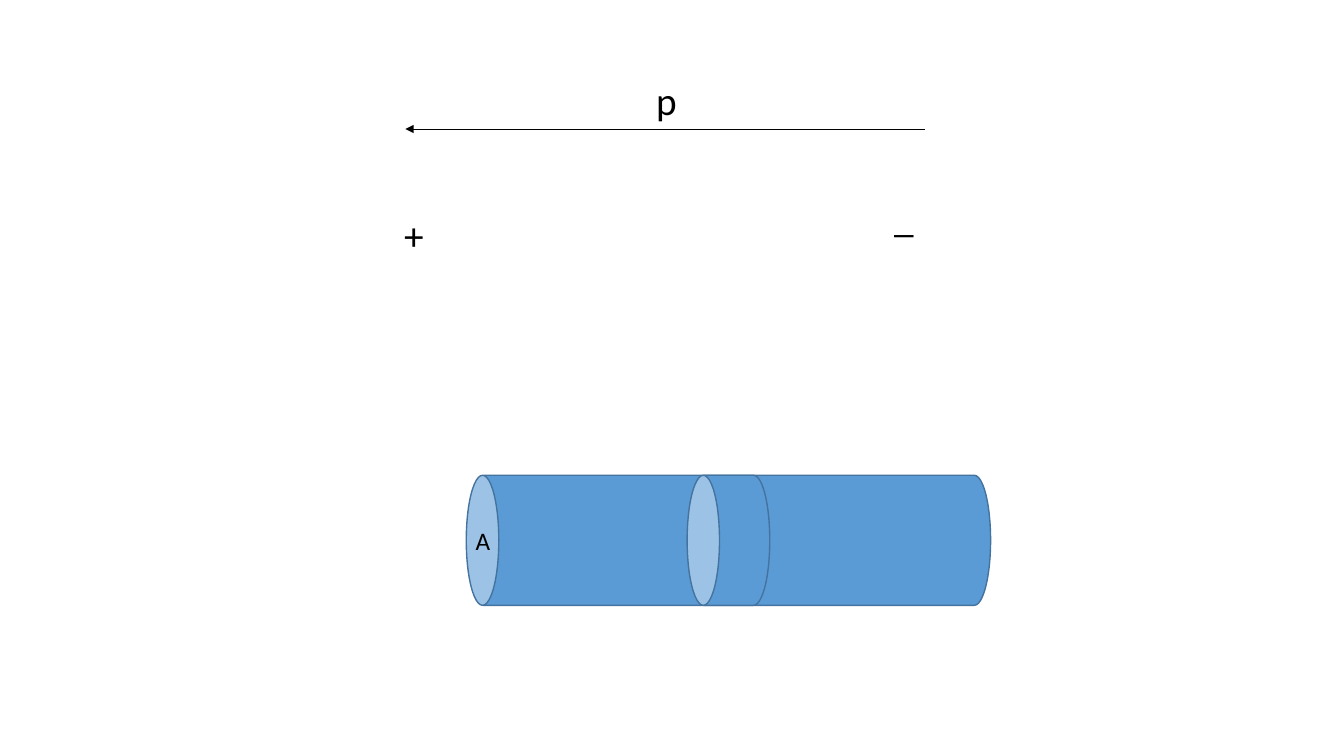
from lxml.etree import SubElement
from pptx import Presentation
from pptx.dml.color import RGBColor
from pptx.enum.shapes import MSO_CONNECTOR, MSO_SHAPE
from pptx.enum.text import MSO_AUTO_SIZE
from pptx.oxml.ns import qn
from pptx.util import Inches, Pt

COLORS = {"ink": "000000", "fill": "5B9BD5", "outline": "43739E"}
FONT = "Calibri"

# text, left, top, width, height, size, wrap
LABELS = [
    ("+", 3.91, 2.05, 0.4, 0.57, 28, False),
    ("_", 8.77, 1.87, 0.4, 0.57, 28, False),
    ("p", 6.41, 0.71, 0.37, 0.57, 28, True),
    ("A", 4.62, 5.16, 0.35, 0.4, 18, False),
]
ARROW = {"start": 9.17, "end": 4.02, "y": 1.28}
CYLINDER_CENTER = (7.225, 5.36)
DIAMETER = 1.29
# length, cap adjustment
CYLINDERS = [(5.2, 0.25), (0.82, 0.392)]


def color(name):
    return RGBColor.from_string(COLORS[name])


def add_cylinder(slide, length, cap):
    """Add a can lying on its side around the shared centre."""
    x, y = CYLINDER_CENTER
    cylinder = slide.shapes.add_shape(
        MSO_SHAPE.CAN, Inches(x - DIAMETER / 2), Inches(y - length / 2),
        Inches(DIAMETER), Inches(length))
    cylinder.rotation = 270
    cylinder.adjustments[0] = cap
    cylinder.shadow.inherit = False
    cylinder.fill.solid()
    cylinder.fill.fore_color.rgb = color("fill")
    cylinder.line.color.rgb = color("outline")
    cylinder.line.width = Pt(1)


def add_arrow(slide):
    y = Inches(ARROW["y"])
    arrow = slide.shapes.add_connector(
        MSO_CONNECTOR.STRAIGHT, Inches(ARROW["start"]), y, Inches(ARROW["end"]), y)
    arrow.line.color.rgb = color("ink")
    arrow.line.width = Pt(0.5)
    SubElement(arrow.line._get_or_add_ln(), qn("a:tailEnd"), type="triangle")
    SubElement(arrow._element.spPr, qn("a:effectLst"))


def add_label(slide, text, left, top, width, height, size, wrap):
    box = slide.shapes.add_textbox(*map(Inches, (left, top, width, height)))
    frame = box.text_frame
    frame.word_wrap = wrap
    frame.auto_size = MSO_AUTO_SIZE.SHAPE_TO_FIT_TEXT
    run = frame.paragraphs[0].add_run()
    run.text = text
    for name, value in {"name": FONT, "size": Pt(size)}.items():
        setattr(run.font, name, value)
    run.font.color.rgb = color("ink")


def main():
    presentation = Presentation()
    presentation.slide_width = Inches(13.33)
    presentation.slide_height = Inches(7.5)
    slide = presentation.slides.add_slide(presentation.slide_layouts[6])
    add_arrow(slide)
    for cylinder in CYLINDERS:
        add_cylinder(slide, *cylinder)
    for label in LABELS:
        add_label(slide, *label)
    presentation.save("out.pptx")


if __name__ == "__main__":
    main()
